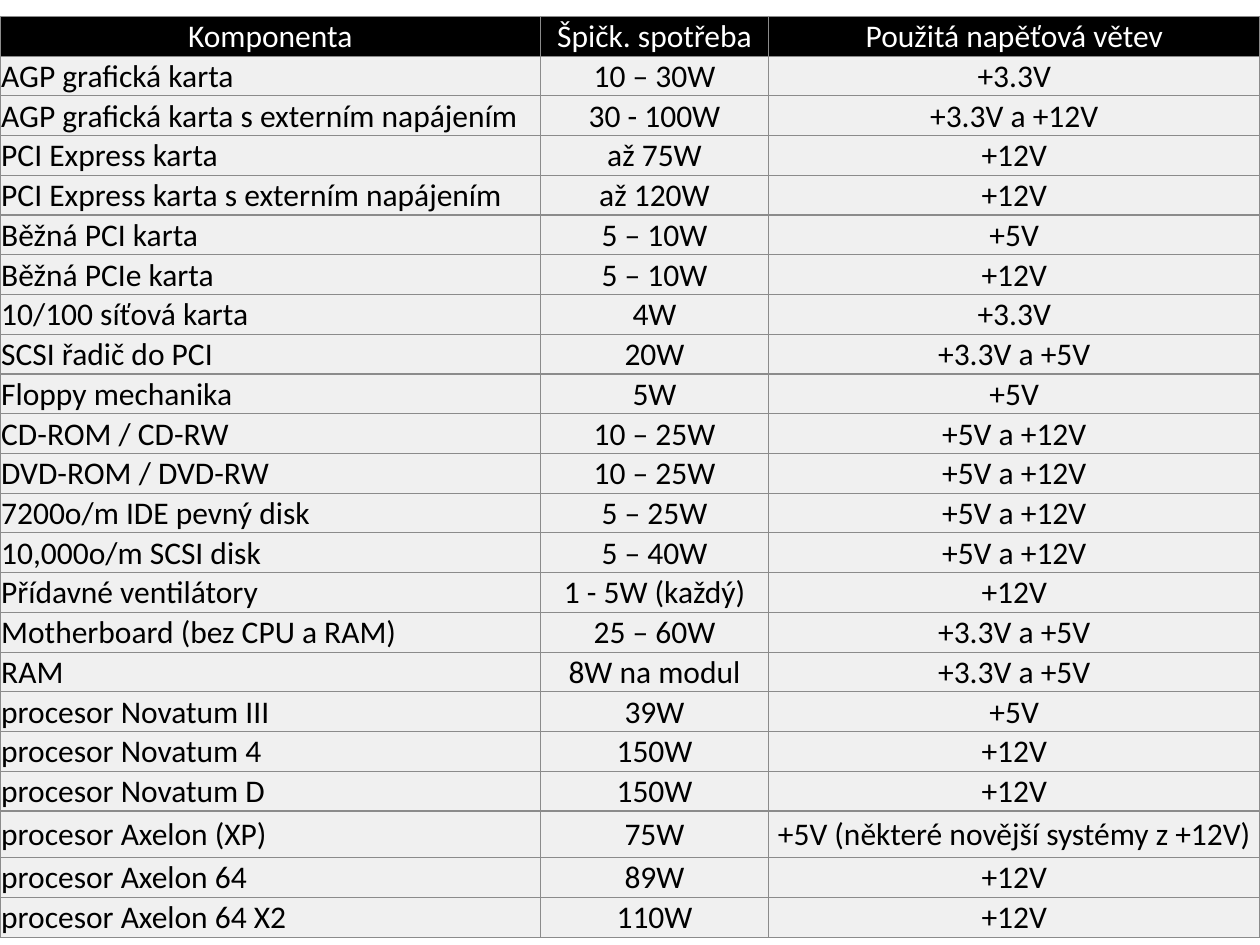
from lxml import etree
from pptx import Presentation
from pptx.dml.color import RGBColor
from pptx.enum.text import MSO_ANCHOR, PP_ALIGN
from pptx.oxml.ns import qn
from pptx.util import Inches, Pt

HEADER = ("Komponenta", "Špičk. spotřeba", "Použitá napěťová větev")
COMPONENTS = [
    ("AGP grafická karta", "10 – 30W", "+3.3V"),
    ("AGP grafická karta s externím napájením", "30 - 100W", "+3.3V a +12V"),
    ("PCI Express karta", "až 75W", "+12V"),
    ("PCI Express karta s externím napájením", "až 120W", "+12V"),
    ("Běžná PCI karta", "5 – 10W", "+5V"),
    ("Běžná PCIe karta", "5 – 10W", "+12V"),
    ("10/100 síťová karta", "4W", "+3.3V"),
    ("SCSI řadič do PCI", "20W", "+3.3V a +5V"),
    ("Floppy mechanika", "5W", "+5V"),
    ("CD-ROM / CD-RW", "10 – 25W", "+5V a +12V"),
    ("DVD-ROM / DVD-RW", "10 – 25W", "+5V a +12V"),
    ("7200o/m IDE pevný disk", "5 – 25W", "+5V a +12V"),
    ("10,000o/m SCSI disk", "5 – 40W", "+5V a +12V"),
    ("Přídavné ventilátory", "1 - 5W (každý)", "+12V"),
    ("Motherboard (bez CPU a RAM)", "25 – 60W", "+3.3V a +5V"),
    ("RAM", "8W na modul", "+3.3V a +5V"),
    ("procesor Novatum III", "39W", "+5V"),
    ("procesor Novatum 4", "150W", "+12V"),
    ("procesor Novatum D", "150W", "+12V"),
    ("procesor Axelon (XP)", "75W", "+5V (některé novější systémy z +12V)"),
    ("procesor Axelon 64", "89W", "+12V"),
    ("procesor Axelon 64 X2", "110W", "+12V"),
]
COLUMN_WIDTHS = (4.29, 1.81, 3.9)
ROW_HEIGHT = 0.31
TALL_ROW, TALL_HEIGHT = 20, 0.37


def rgb(value):
    return RGBColor.from_string(value)


def set_borders(cell, color, width):
    tc_pr = cell._tc.get_or_add_tcPr()
    for i, side in enumerate(("a:lnL", "a:lnR", "a:lnT", "a:lnB")):
        ln = etree.Element(qn(side), w=str(Pt(width)))
        fill = etree.SubElement(ln, qn("a:solidFill"))
        etree.SubElement(fill, qn("a:srgbClr"), val=color)
        tc_pr.insert(i, ln)


def fill_cell(cell, text, align, color, background):
    cell.margin_left = cell.margin_right = cell.margin_top = Inches(0.01)
    cell.margin_bottom = Inches(0)  # keeps all 23 rows on the slide
    cell.vertical_anchor = MSO_ANCHOR.MIDDLE
    cell.fill.solid()
    cell.fill.fore_color.rgb = rgb(background)
    set_borders(cell, "8B8B8B", 0.75)
    p = cell.text_frame.paragraphs[0]
    p.text = text
    p.alignment = align
    font = p.runs[0].font
    font.name, font.size, font.bold = "Calibri", Pt(18), False
    font.color.rgb = rgb(color)


def add_power_table(slide, left, top, width, height):
    rows = [HEADER, *COMPONENTS]
    table = slide.shapes.add_table(
        len(rows), len(HEADER), Inches(left), Inches(top), Inches(width), Inches(height)
    ).table
    for column, share in zip(table.columns, COLUMN_WIDTHS):
        column.width = Inches(width * share / sum(COLUMN_WIDTHS))
    for i, texts in enumerate(rows):
        table.rows[i].height = Inches(TALL_HEIGHT if i == TALL_ROW else ROW_HEIGHT)
        color, background = ("FFFFFF", "000000") if i == 0 else ("000000", "F0F0F0")
        for j, text in enumerate(texts):
            align = PP_ALIGN.LEFT if i and j == 0 else PP_ALIGN.CENTER
            fill_cell(table.cell(i, j), text, align, color, background)


def main():
    prs = Presentation()
    prs.slide_width, prs.slide_height = Inches(10), Inches(7.5)
    slide = prs.slides.add_slide(prs.slide_layouts[6])
    add_power_table(slide, 0, 0.13, 10, 7.21)
    prs.save("out.pptx")


if __name__ == "__main__":
    main()
